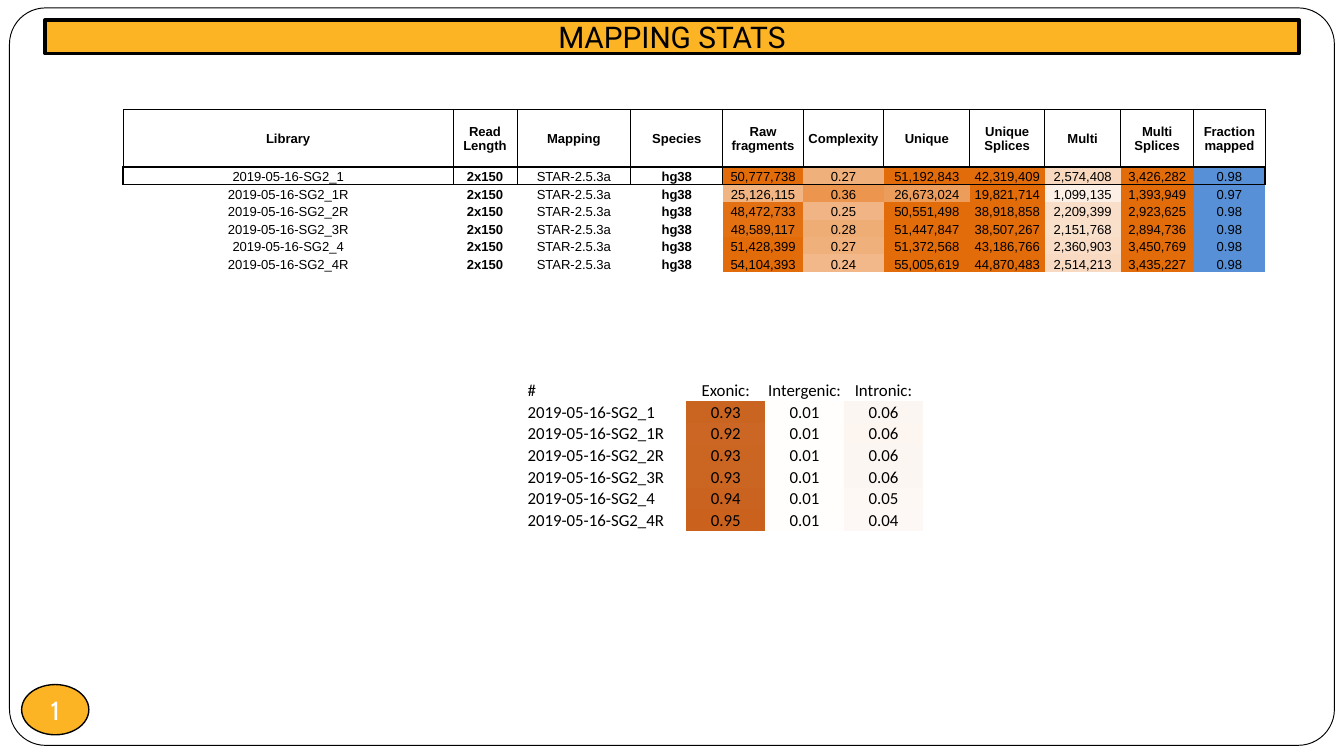
from lxml import etree
from pptx import Presentation
from pptx.dml.color import RGBColor
from pptx.enum import shapes, text
from pptx.oxml import ns
from pptx.util import Cm, Pt

BLACK, WHITE, GOLD = "000000", "FFFFFF", "FCB424"
DEEP, BLUE, SKY = "E26B0A", "5790D6", "5890D7"
PLAIN_STYLE = "{2D5ABB26-0587-4C30-8999-92F81FD0307C}"
LEFT, MID = text.PP_ALIGN.LEFT, text.PP_ALIGN.CENTER

# Library, raw, complexity, unique, unique splices, multi, multi splices, mapped
# followed by the shades of raw, complexity, unique, multi and mapped
STATS = [
    ("2019-05-16-SG2_1", "50,777,738 0.27 51,192,843 42,319,409 2,574,408 3,426,282 0.98",
     (DEEP, "F0B07B", DEEP, "F8D9C0", BLUE)),
    ("2019-05-16-SG2_1R", "25,126,115 0.36 26,673,024 19,821,714 1,099,135 1,393,949 0.97",
     ("F1B584", "EB954F", "EC9D5C", "FCEFE5", SKY)),
    ("2019-05-16-SG2_2R", "48,472,733 0.25 50,551,498 38,918,858 2,209,399 2,923,625 0.98",
     ("E37012", "F1B585", DEEP, "F9DFC9", SKY)),
    ("2019-05-16-SG2_3R", "48,589,117 0.28 51,447,847 38,507,267 2,151,768 2,894,736 0.98",
     ("E37011", "EFAD76", DEEP, "F9E0CB", BLUE)),
    ("2019-05-16-SG2_4", "51,428,399 0.27 51,372,568 43,186,766 2,360,903 3,450,769 0.98",
     (DEEP, "F0B07B", DEEP, "F9DDC6", SKY)),
    ("2019-05-16-SG2_4R", "54,104,393 0.24 55,005,619 44,870,483 2,514,213 3,435,227 0.98",
     (DEEP, "F2B88A", DEEP, "F8DAC2", BLUE)),
]
HEADS = ["Library", "Read Length", "Mapping", "Species", "Raw fragments", "Complexity",
         "Unique", "Unique Splices", "Multi", "Multi Splices", "Fraction mapped"]
WIDTHS = [6.23, 1.21, 2.15, 1.74, 1.52, 1.52, 1.63, 1.41, 1.44, 1.38, 1.35]

# Exonic, intergenic and intronic shares, with the exonic and intronic shades
SHARES = [
    ("0.93", "0.01", "0.06", "CA6521", "FCF6F2"),
    ("0.92", "0.01", "0.06", "CB6624", "FCF5F0"),
    ("0.93", "0.01", "0.06", "CA6522", "FCF6F2"),
    ("0.93", "0.01", "0.06", "CA6522", "FCF6F2"),
    ("0.94", "0.01", "0.05", "CA631F", "FDF8F4"),
    ("0.95", "0.01", "0.04", "CA621E", "FDF8F5"),
]


def paint(fill, shade):
    fill.solid()
    fill.fore_color.rgb = RGBColor.from_string(shade)


def write(frame, words, size, font, shade=BLACK, bold=False, align=MID):
    para = frame.paragraphs[0]
    para.alignment = align
    run = para.add_run()
    run.text = words
    run.font.size, run.font.name, run.font.bold = Pt(size), font, bold
    run.font.color.rgb = RGBColor.from_string(shade)


def dress(shape, shade, width):
    paint(shape.fill, shade)
    paint(shape.line.fill, BLACK)
    shape.line.width = Pt(width)
    shape.shadow.inherit = False


def add_frame(slide, box):
    frame = slide.shapes.add_shape(shapes.MSO_SHAPE.ROUNDED_RECTANGLE, *map(Cm, box))
    frame.adjustments[0] = 0.049
    dress(frame, WHITE, 0.5)


def add_badge(slide, box, words):
    badge = slide.shapes.add_shape(shapes.MSO_SHAPE.OVAL, *map(Cm, box))
    dress(badge, GOLD, 0.75)
    body = badge.text_frame
    body.margin_left = body.margin_right = body.margin_top = body.margin_bottom = 0
    body.word_wrap = False
    body.vertical_anchor = text.MSO_ANCHOR.MIDDLE
    write(body, words, 14, "Cabin", WHITE)


def add_title(slide, box, words):
    title = slide.shapes.title
    title.left, title.top, title.width, title.height = map(Cm, box)
    # Rounded outline for the title placeholder
    geom = etree.SubElement(title._element.spPr, ns.qn("a:prstGeom"), prst="roundRect")
    etree.SubElement(geom, ns.qn("a:avLst"))
    dress(title, GOLD, 2)
    body = title.text_frame
    body.auto_size = text.MSO_AUTO_SIZE.NONE
    body.vertical_anchor = text.MSO_ANCHOR.MIDDLE
    write(body, words, 16, "Roboto")
    # Bring the title in front of the frame
    slide.shapes._spTree.append(title._element)


def add_grid(slide, spot, widths, heights):
    size = sum(widths), sum(heights)
    grid = slide.shapes.add_table(len(heights), len(widths), *map(Cm, (*spot, *size))).table
    grid._tbl.tblPr.find(ns.qn("a:tableStyleId")).text = PLAIN_STYLE
    grid.first_row = grid.horz_banding = False
    for col, width in zip(grid.columns, widths):
        col.width = Cm(width)
    for row, height in zip(grid.rows, heights):
        row.height = Cm(height)
    return grid


def edge(cell, **sides):
    props = cell._tc.get_or_add_tcPr()
    for side in "LRTB":
        if side in sides:
            line = etree.SubElement(props, ns.qn("a:ln" + side), w=str(Pt(sides[side])))
            fill = etree.SubElement(line, ns.qn("a:solidFill"))
            etree.SubElement(fill, ns.qn("a:srgbClr"), val=BLACK)


def fill_cell(cell, words, size, font, shade=None, anchor=text.MSO_ANCHOR.BOTTOM, **look):
    cell.margin_left = cell.margin_right = cell.margin_top = Cm(0.02)
    cell.margin_bottom = 0
    cell.vertical_anchor = anchor
    write(cell.text_frame, words, size, font, **look)
    if shade_code := shade:
        paint(cell.fill, shade_code)


def add_stats(slide, spot):
    grid = add_grid(slide, spot, WIDTHS, [1.09] + [0.33] * len(STATS))
    # Header row
    for c, head in enumerate(HEADS):
        cell = grid.cell(0, c)
        edge(cell, L=0.5, R=0.5, T=0.5, B=1)
        fill_cell(cell, head, 7, "Arial", anchor=text.MSO_ANCHOR.MIDDLE, bold=True)
    # One row for each library
    last = len(HEADS) - 1
    for r, (name, counts, shades) in enumerate(STATS, 1):
        raw, mix, sole, multi, part = shades
        hues = [None] * 4 + [raw, mix, sole, DEEP, multi, DEEP, part]
        row = [name, "2x150", "STAR-2.5.3a", "hg38"] + counts.split()
        for c, (words, hue) in enumerate(zip(row, hues)):
            cell = grid.cell(r, c)
            if r == 1:
                sides = {"T": 1}
                if c < 4:
                    sides["L"] = 0.5 if c else 1
                if c < 3:
                    sides["R"] = 0.5
                if c == last:
                    sides["R"] = 1
                edge(cell, **sides)
            fill_cell(cell, words, 7, "Arial", hue, bold=c in (1, 3))


def add_shares(slide, spot):
    grid = add_grid(slide, spot, [3.02] + [1.49] * 3, [0.41] * (len(SHARES) + 1))
    rows = [(("#", "Exonic:", "Intergenic:", "Intronic:"), [None] * 4)]
    for (name, *_), (exon, inter, intron, dark, pale) in zip(STATS, SHARES):
        rows.append(((name, exon, inter, intron), (None, dark, "FFFEFD", pale)))
    for r, (row, hues) in enumerate(rows):
        for c, (words, hue) in enumerate(zip(row, hues)):
            fill_cell(grid.cell(r, c), words, 9, "Calibri", hue, align=MID if c else LEFT)


def main():
    deck = Presentation()
    deck.slide_width, deck.slide_height = Cm(25.4), Cm(14.29)
    slide = deck.slides.add_slide(deck.slide_layouts[5])
    add_frame(slide, (0.18, 0.15, 25.04, 13.94))
    add_badge(slide, (0.41, 12.94, 1.27, 0.95), "1")
    add_title(slide, (0.85, 0.38, 23.7, 0.63), "MAPPING STATS")
    add_shares(slide, (9.95, 7.17))
    add_stats(slide, (2.33, 2.07))
    deck.save("out.pptx")


if __name__ == "__main__":
    main()
